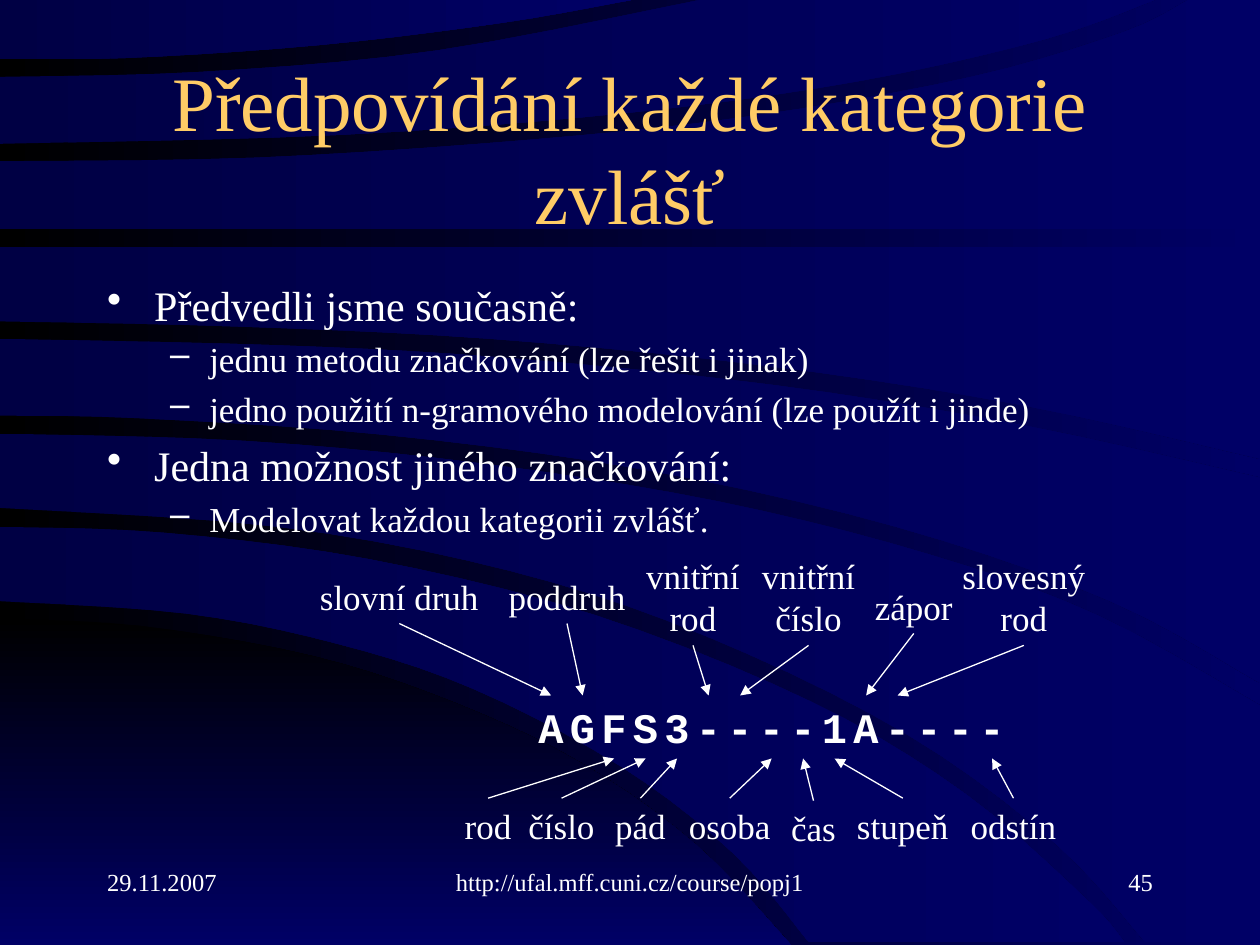
from lxml import etree
from pptx import Presentation
from pptx import util as u
from pptx.dml.color import RGBColor
from pptx.enum import shapes, text
from pptx.oxml.ns import qn

WHITE, GOLD, BLACK, NAVY, BLUE = "FFFFFF", "FFCC66", "000000", "000044", "000066"
SERIF, MONO = "Times New Roman", "Courier New"
LEFT, CENTER, RIGHT = text.PP_ALIGN.LEFT, text.PP_ALIGN.CENTER, text.PP_ALIGN.RIGHT
WIDTH, HEIGHT = 25.4, 19.05

# All positions are in centimetres.
TITLE = "Předpovídání každé kategorie zvlášť"
BULLETS = [
    (0, "Předvedli jsme současně:"),
    (1, "jednu metodu značkování (lze řešit i jinak)"),
    (1, "jedno použití n-gramového modelování (lze použít i jinde)"),
    (0, "Jedna možnost jiného značkování:"),
    (1, "Modelovat každou kategorii zvlášť."),
]
LEVELS = [  # bullet, size, text indent, hanging
    ("•", 24, 0.95, 0.95),
    ("–", 20, 2.06, 0.79),
]
FOOTER = [  # text, left, width, alignment
    ("29.11.2007", 1.91, 5.29, LEFT),
    ("http://ufal.mff.cuni.cz/course/popj1", 8.68, 8.04, CENTER),
    ("45", 18.2, 5.29, RIGHT),
]
TAG = "AGFS3----1A----"
TAG_CENTER, TAG_PITCH = 11.11, WIDTH / 40
TAG_TOP, TAG_BOTTOM = 14.02, 15.29
ONE_LINE, TWO_LINES = 1.09, 1.96
LABELS_ABOVE = [  # text, tag position, centre, width, top, height
    ("slovní druh", 0, 8.05, 3.81, 11.48, ONE_LINE),
    ("poddruh", 1, 11.43, 2.97, 11.48, ONE_LINE),
    ("vnitřní rod", 5, 13.97, 2.54, 11.05, TWO_LINES),
    ("vnitřní číslo", 6, 16.3, 2.54, 11.05, TWO_LINES),
    ("zápor", 10, 18.42, 2.12, 11.68, ONE_LINE),
    ("slovesný rod", 11, 20.64, 3.18, 11.05, TWO_LINES),
]
LABELS_BELOW = [
    ("rod", 2, 9.84, 1.48, 16.09, ONE_LINE),
    ("číslo", 3, 11.32, 1.9, 16.09, ONE_LINE),
    ("pád", 4, 12.91, 1.69, 16.09, ONE_LINE),
    ("osoba", 7, 14.71, 2.33, 16.09, ONE_LINE),
    ("čas", 8, 16.4, 1.48, 16.14, ONE_LINE),
    ("stupeň", 9, 18.2, 2.54, 16.09, ONE_LINE),
    ("odstín", 14, 20.43, 2.33, 16.09, ONE_LINE),
]
# Each band is a chain of smooth edges, joined by straight lines.
DISC = [
    [(0, 12.47), (2.84, 12.62), (6.32, 13.23), (9.17, 14.17), (11.73, 15.39),
     (14.05, 17.04), (15.95, 19.05)],
    [(0, 19.05)],
]
BANDS = [
    [[(0, 10.62), (3.3, 10.74), (7.47, 11.28), (11.99, 12.4), (16.36, 14.15),
      (19.46, 16), (21.92, 18.14), (22.68, 19)],
     [(16.31, 19), (14.78, 17.2), (12.5, 15.44), (9.55, 13.89), (6.81, 12.98),
      (3.76, 12.37), (0, 12.12)]],
    [[(0, 8.74), (4.95, 8.89), (9.75, 9.35), (14.48, 10.11), (18.75, 11.18),
      (22.17, 12.42), (25.4, 14.22)],
     [(25.4, 19)],
     [(23.09, 19), (21.29, 17.02), (18.29, 14.81), (14.25, 12.83), (10.29, 11.51),
      (5.61, 10.62), (0, 10.24)]],
    [[(0, 6.83), (5.56, 6.96), (10.13, 7.21), (15.65, 7.77), (20.73, 8.59), (25.4, 9.63)],
     [(25.4, 13.77), (22.38, 12.12), (18.06, 10.62), (13, 9.47), (7.7, 8.76),
      (2.77, 8.43), (0, 8.38)]],
    [[(0, 4.98), (25.4, 4.98)],
     [(25.4, 9.25), (20.65, 8.18), (15.42, 7.37), (9.88, 6.83), (4.72, 6.58), (0, 6.48)]],
    [[(0, 3.25), (5.16, 3.18), (10.67, 2.82), (15.16, 2.34), (19.58, 1.55),
      (22.66, 0.64), (23.95, 0)],
     [(25.4, 0), (25.4, 4.62)],
     [(0, 4.62)]],
    [[(0, 1.55), (4.06, 1.45), (8.81, 1.02), (14.12, 0)],
     [(23.29, 0), (21.08, 0.79), (17.35, 1.63), (12.8, 2.26), (6.86, 2.72), (0, 2.9)]],
    [[(0, 0)],
     [(12.73, 0), (10.13, 0.46), (6.43, 0.91), (2.57, 1.17), (0, 1.19)]],
]


def color(value):
    return RGBColor.from_string(value)


def fill_gradient(fill, start, end, angle=0):
    fill.gradient()
    fill.gradient_angle = angle
    for stop, position, value in zip(fill.gradient_stops, (0, 1), (start, end)):
        stop.position = position
        stop.color.rgb = color(value)


def smooth(knots, steps=5):
    """Return points of a Catmull-Rom curve through the knots."""
    padded = [knots[0], *knots, knots[-1]]
    points = [knots[0]]
    for a, b, c, d in zip(padded, padded[1:], padded[2:], padded[3:]):
        for step in range(1, steps + 1):
            t = step / steps
            points.append(tuple(
                (2 * q + (r - p) * t + (2 * p - 5 * q + 4 * r - s) * t ** 2
                 + (3 * q - p - 3 * r + s) * t ** 3) / 2
                for p, q, r, s in zip(a, b, c, d)))
    return points


def add_band(slide, edges, start, end, angle=0):
    points = [(u.Cm(x), u.Cm(y)) for edge in edges for x, y in smooth(edge)]
    builder = slide.shapes.build_freeform(*points[0])
    builder.add_line_segments(points[1:])
    band = builder.convert_to_shape()
    band.shadow.inherit = False
    band.line.fill.background()
    fill_gradient(band.fill, start, end, angle)


def format_paragraph(paragraph, content, size, ink=WHITE, font=SERIF, bold=False, align=LEFT):
    paragraph.alignment = align
    run = paragraph.add_run()
    run.text = content
    run.font.size, run.font.name, run.font.bold = u.Pt(size), font, bold
    run.font.color.rgb = color(ink)


def add_text(slide, content, left, top, width, height, *, size=20, margin=0.25,
             anchor=text.MSO_ANCHOR.TOP, **style):
    frame = slide.shapes.add_textbox(*map(u.Cm, (left, top, width, height))).text_frame
    frame.word_wrap = True
    frame.vertical_anchor = anchor
    frame.margin_left = frame.margin_right = u.Cm(margin)
    if content:
        format_paragraph(frame.paragraphs[0], content, size, **style)
    return frame


def add_bullets(slide):
    frame = add_text(slide, "", 1.91, 5.5, 21.59, 11.43)
    for number, (level, content) in enumerate(BULLETS):
        bullet, size, indent, hanging = LEVELS[level]
        paragraph = frame.add_paragraph() if number else frame.paragraphs[0]
        format_paragraph(paragraph, content, size)
        paragraph.level = level
        paragraph.space_before = u.Pt(0.23 * size)
        properties = paragraph._p.get_or_add_pPr()
        properties.set("marL", str(u.Cm(indent)))
        properties.set("indent", str(-u.Cm(hanging)))
        etree.SubElement(properties, qn("a:buChar")).set("char", bullet)


def add_arrow(slide, *ends):
    arrow = slide.shapes.add_connector(shapes.MSO_CONNECTOR.STRAIGHT, *map(u.Cm, ends))
    arrow.line.color.rgb = color(WHITE)
    arrow.line.width = u.Pt(0.75)
    etree.SubElement(arrow.line._get_or_add_ln(), qn("a:tailEnd")).set("type", "triangle")
    etree.SubElement(arrow._element.spPr, qn("a:effectLst"))


def add_labels(slide, labels, above):
    for content, position, center, width, top, height in labels:
        add_text(slide, content, center - width / 2, top, width, height,
                 margin=0.1, align=CENTER)
        add_arrow(slide, center, top + height if above else top,
                  TAG_CENTER + position * TAG_PITCH, TAG_TOP if above else TAG_BOTTOM)


def main():
    deck = Presentation()
    deck.slide_width, deck.slide_height = u.Cm(WIDTH), u.Cm(HEIGHT)
    slide = deck.slides.add_slide(deck.slide_layouts[6])
    fill_gradient(slide.background.fill, BLACK, BLUE)
    add_band(slide, DISC, BLACK, BLUE, angle=270)
    for band in BANDS:
        add_band(slide, band, NAVY, BLUE)

    for content, left, width, align in FOOTER:
        add_text(slide, content, left, 17.35, width, 1.27, size=14, align=align)
    add_text(slide, TITLE, 1.91, 1.06, 21.59, 3.81, size=44, ink=GOLD, align=CENTER,
             anchor=text.MSO_ANCHOR.MIDDLE)
    add_bullets(slide)

    for position, symbol in enumerate(TAG):
        add_text(slide, symbol, TAG_CENTER + position * TAG_PITCH - 0.53, TAG_TOP, 1.06, 1.27,
                 size=24, font=MONO, bold=True, margin=0.1, align=CENTER)
    add_labels(slide, LABELS_ABOVE, above=True)
    add_labels(slide, LABELS_BELOW, above=False)
    deck.save("out.pptx")


if __name__ == "__main__":
    main()
